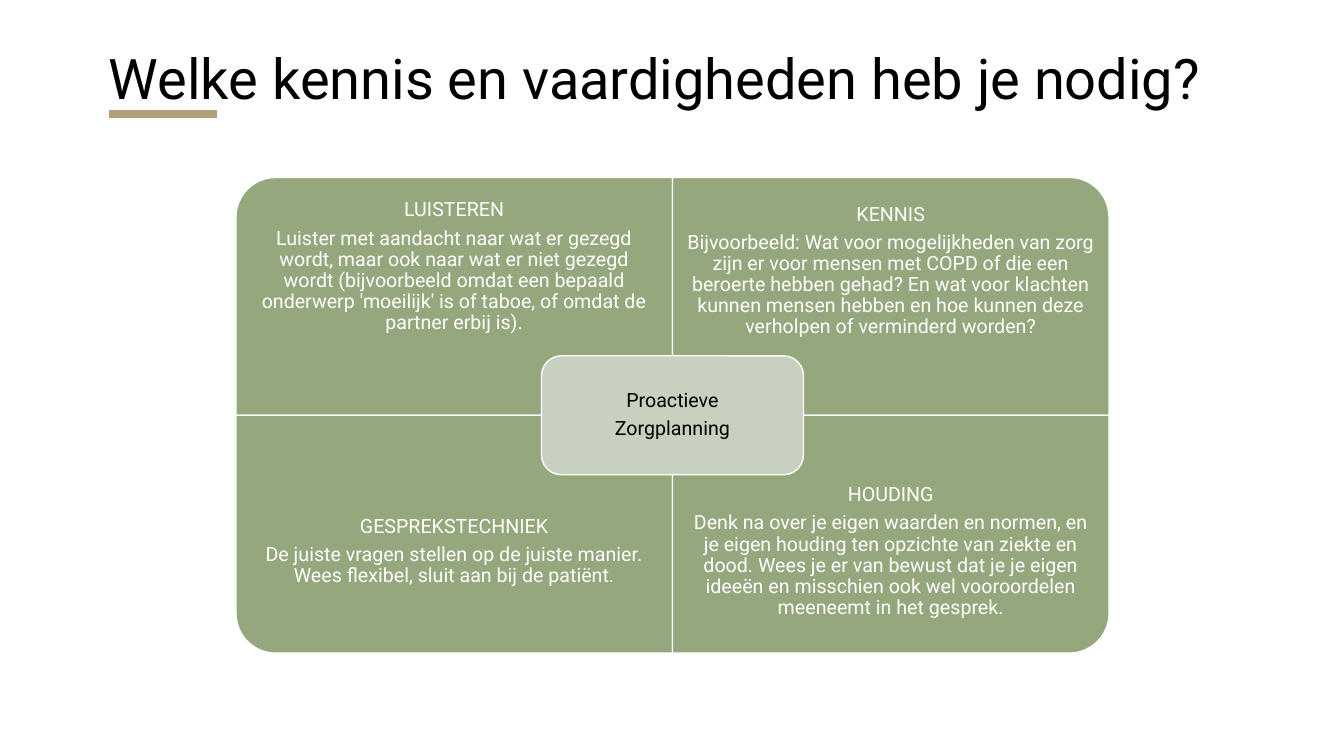
from pptx import Presentation
from pptx.dml.color import RGBColor
from pptx.enum.shapes import MSO_CONNECTOR as LINE, MSO_SHAPE as SHAPE
from pptx.enum.text import MSO_ANCHOR as ANCHOR, PP_ALIGN as ALIGN
from pptx.oxml.ns import qn
from pptx.util import Inches, Pt
from lxml.etree import SubElement

HUES = {"sage": "94A77D", "pale": "C8D0BF", "tan": "B49E7A",
        "white": "FFFFFF", "black": "000000"}
FONT = "Roboto"

# Text, quarter turns and text insets (left, top, right, bottom) by row and column
QUADS = [
    [(["LUISTEREN",
       "Luister met aandacht naar wat er gezegd wordt, maar ook naar wat er niet "
       "gezegd wordt (bijvoorbeeld omdat een bepaald onderwerp 'moeilijk' is of "
       "taboe, of omdat de partner erbij is)."], 270, (0.16, 0.12, 0.16, 0.11)),
     (["KENNIS",
       "Bijvoorbeeld: Wat voor mogelijkheden van zorg zijn er voor mensen met COPD "
       "of die een beroerte hebben gehad? En wat voor klachten kunnen mensen hebben "
       "en hoe kunnen deze verholpen of verminderd worden?"],
      0, (0.12, 0.2, 0.12, 0.11))],
    [(["GESPREKSTECHNIEK",
       "De juiste vragen stellen op de juiste manier. Wees flexibel, sluit aan bij "
       "de patiënt."], 180, (0.16, 0, 0.16, 0.24)),
     (["HOUDING",
       "Denk na over je eigen waarden en normen, en je eigen houding ten opzichte "
       "van ziekte en dood. Wees je er van bewust dat je je eigen ideeën en "
       "misschien ook wel vooroordelen meeneemt in het gesprek."],
      90, (0.12, 0.04, 0.12, 0.28))],
]


def color(name):
    return RGBColor.from_string(HUES[name])


def style(font, size, hue):
    font.name, font.size = FONT, Pt(size)
    font.color.rgb = color(hue)


def write(frame, lines, hue, insets):
    frame.word_wrap = True
    frame.vertical_anchor = ANCHOR.MIDDLE
    (frame.margin_left, frame.margin_top,
     frame.margin_right, frame.margin_bottom) = map(Inches, insets)
    frame.text = "\n".join(lines)
    for para in frame.paragraphs:
        para.alignment = ALIGN.CENTER
        para.line_spacing, para.space_after = 0.9, Pt(5)
        for run in para.runs:
            style(run.font, 14, hue)


def panel(shapes, kind, box, hue):
    shape = shapes.add_shape(kind, *map(Inches, box))
    shape.shadow.inherit = False
    shape.fill.solid()
    shape.fill.fore_color.rgb = color(hue)
    shape.line.color.rgb = color("white")
    shape.line.width = Pt(1)
    return shape


def heading(slide, box, text):
    left, top, wide, high = box
    # Accent rule under the first word
    y = Inches(top + 0.75)
    rule = slide.shapes.add_connector(
        LINE.STRAIGHT, Inches(left + 0.1), y, Inches(left + 1.17), y)
    rule.line.color.rgb = color("tan")
    rule.line.width = Pt(6)
    SubElement(rule._element.spPr, qn("a:effectLst"))
    # Title
    title = slide.shapes.title
    title.left, title.top, title.width, title.height = map(Inches, box)
    frame = title.text_frame
    frame.text = text
    frame.word_wrap = True
    frame.vertical_anchor = ANCHOR.TOP
    para = frame.paragraphs[0]
    para.alignment = ALIGN.LEFT
    style(para.runs[0].font, 40, "black")


def quad(shapes, box, turn, lines, insets, low):
    left, top, wide, high = box
    # A shape turned sideways swaps its sides around the same centre
    w, h = (high, wide) if turn % 180 else (wide, high)
    tile = panel(shapes, SHAPE.ROUND_1_RECTANGLE,
                 (left + (wide - w) / 2, top + (high - h) / 2, w, h), "sage")
    tile.rotation = turn
    # Text fills the outer three quarters
    tall = high * 0.75
    y = top + high - tall if low else top
    label = shapes.add_textbox(*map(Inches, (left, y, wide, tall)))
    write(label.text_frame, lines, "white", insets)


def matrix(slide, box):
    left, top, wide, high = box
    shapes = slide.shapes.add_group_shape().shapes
    w, h = wide / 2, high / 2
    for row, line in enumerate(QUADS):
        for col, (lines, turn, insets) in enumerate(line):
            quad(shapes, (left + col * w, top + row * h, w, h),
                 turn, lines, insets, row == 1)
    # Core in the middle
    cw, ch = w * 0.6, h / 2
    core = panel(shapes, SHAPE.ROUNDED_RECTANGLE,
                 (left + w - cw / 2, top + h - ch / 2, cw, ch), "pale")
    write(core.text_frame, ["Proactieve", "Zorgplanning"], "black", [0.06] * 4)


def main():
    deck = Presentation()
    deck.slide_width, deck.slide_height = Inches(13.33), Inches(7.5)
    slide = deck.slides.add_slide(deck.slide_layouts[5])
    heading(slide, (0.98, 0.38, 11.18, 1.09),
            "Welke kennis en vaardigheden heb je nodig?")
    matrix(slide, (2.34, 1.76, 8.66, 4.72))
    deck.save("out.pptx")


if __name__ == "__main__":
    main()
